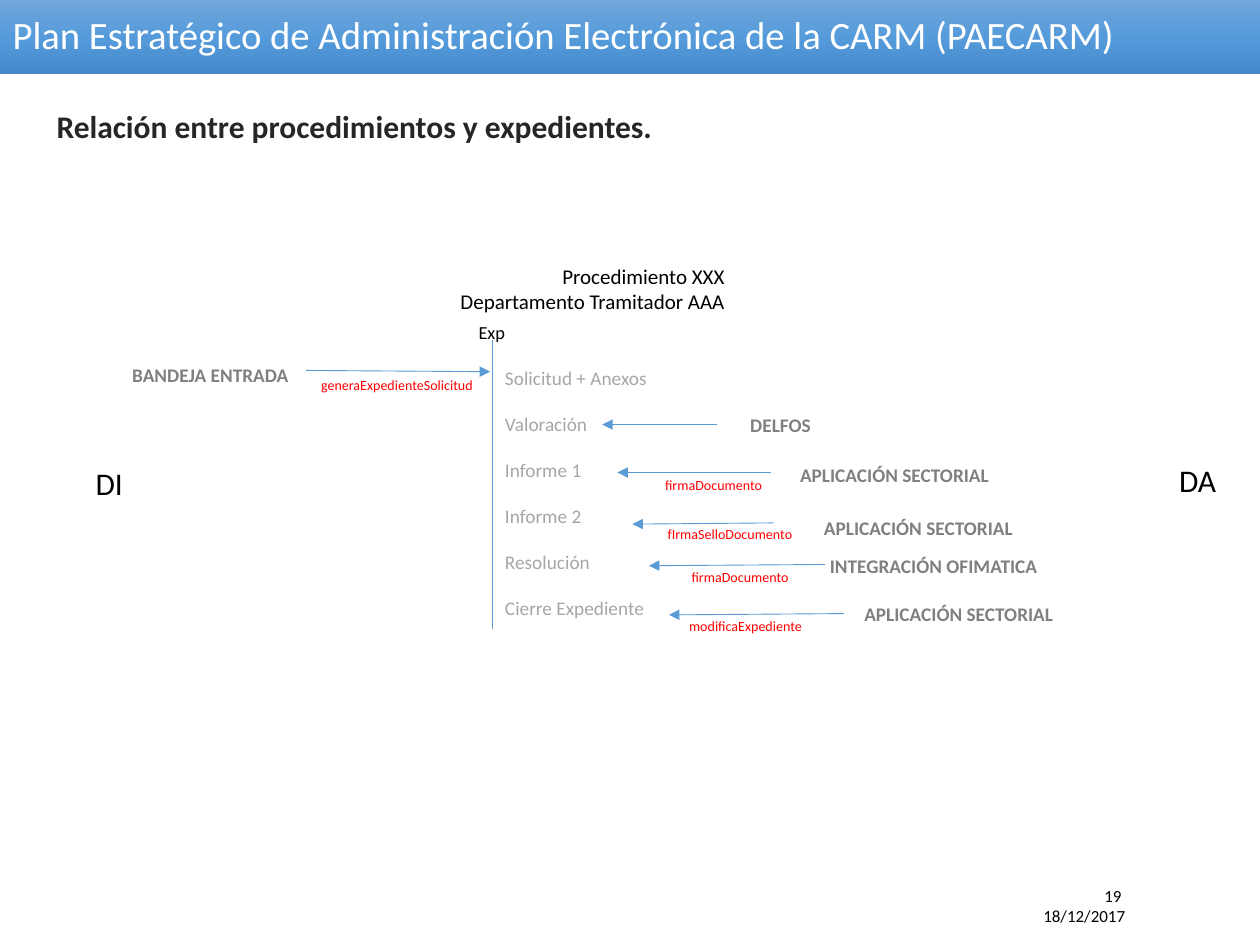
from copy import deepcopy
from dataclasses import dataclass

from lxml.etree import SubElement
from pptx import Presentation
from pptx.dml.color import RGBColor
from pptx.enum.shapes import MSO_CONNECTOR
from pptx.enum.text import MSO_ANCHOR, MSO_AUTO_SIZE, PP_ALIGN
from pptx.oxml.ns import qn
from pptx.util import Inches, Pt

# Grid of 100 columns by 75 rows over the whole slide
SLIDE_WIDTH, SLIDE_HEIGHT = Inches(10), Inches(7.5)
COLUMNS, ROWS = 100, 75


@dataclass(frozen=True)
class Theme:
    font: str = "Calibri"
    black: str = "000000"
    white: str = "FFFFFF"
    heading: str = "262626"
    system: str = "808080"
    step: str = "A6A6A6"
    call: str = "FF0000"
    line: str = "5B9BD5"
    band: tuple = ((0, "71A6DB"), (0.5, "559BDB"), (1, "448ACA"))
    title_size: float = 22.1
    large_size: float = 18
    procedure_size: float = 12
    body_size: float = 11
    file_size: float = 10.5
    footer_size: float = 9.7
    call_size: float = 8
    line_width: float = 0.5
    step_gap: float = 13


THEME = Theme()

STEPS = ("Solicitud + Anexos", "Valoración", "Informe 1",
         "Informe 2", "Resolución", "Cierre Expediente")

# Arrow start and end, in columns and rows
ARROWS = (
    ((24.3, 29.4), (38.9, 29.5)),
    ((56.9, 33.7), (47.8, 33.7)),
    ((61.2, 37.5), (49, 37.5)),
    ((61.4, 41.5), (50.2, 41.6)),
    ((65.5, 44.8), (51.5, 44.9)),
    ((67, 48.7), (53.1, 48.8)),
)

# Text, left, top and width of each box, in columns and rows
SYSTEMS = (
    ("BANDEJA ENTRADA", 9.4, 28.3, 14.6),
    ("DELFOS", 58.5, 32.3, 6.9),
    ("APLICACIÓN SECTORIAL", 62.4, 36.3, 17.2),
    ("APLICACIÓN SECTORIAL", 64.3, 40.5, 17.2),
    ("INTEGRACIÓN OFIMATICA", 64.7, 43.5, 18.8),
    ("APLICACIÓN SECTORIAL", 67.5, 47.3, 17.2),
)
CALLS = (
    ("generaExpedienteSolicitud", 24.5, 29.4, 14.3),
    ("firmaDocumento", 51.8, 37.3, 9.8),
    ("fIrmaSelloDocumento", 52, 41.2, 12),
    ("firmaDocumento", 53.9, 44.6, 9.8),
    ("modificaExpediente", 53.7, 48.5, 11.1),
)
PARTIES = (("DI", 6.6, 36.3, 4.2), ("DA", 92.6, 36.1, 5))


def across(columns):
    return round(SLIDE_WIDTH * columns / COLUMNS)


def down(rows):
    return round(SLIDE_HEIGHT * rows / ROWS)


def color(value):
    return RGBColor.from_string(value)


def write(frame, *lines, size, ink=THEME.black, bold=False,
          align=PP_ALIGN.LEFT, gap=0, line_spacing=None):
    """Fill a text frame with one paragraph per line."""
    for index, line in enumerate(lines):
        paragraph = frame.add_paragraph() if index else frame.paragraphs[0]
        paragraph.alignment = align
        if index and gap:
            paragraph.space_before = Pt(gap)
        if line_spacing:
            paragraph.line_spacing = line_spacing
        run = paragraph.add_run()
        run.text = line
        run.font.name, run.font.size, run.font.bold = THEME.font, Pt(size), bold
        run.font.color.rgb = color(ink)


def add_text(slide, *lines, left, top, width, height=2.9, wrap=False, **style):
    shape = slide.shapes.add_textbox(
        across(left), down(top), across(width), down(height))
    shape.text_frame.word_wrap = wrap
    shape.text_frame.auto_size = MSO_AUTO_SIZE.SHAPE_TO_FIT_TEXT
    write(shape.text_frame, *lines, **style)


def add_line(slide, start, end, arrow=False):
    connector = slide.shapes.add_connector(
        MSO_CONNECTOR.STRAIGHT, across(start[0]), down(start[1]),
        across(end[0]), down(end[1]))
    connector.line.color.rgb = color(THEME.line)
    connector.line.width = Pt(THEME.line_width)
    if arrow:
        SubElement(connector.line._get_or_add_ln(), qn("a:tailEnd"), type="triangle")
    SubElement(connector._element.spPr, qn("a:effectLst"))


def fill_band(shape):
    """Vertical gradient with three stops."""
    shape.fill.gradient()
    shape.fill.gradient_angle = 270
    stop_list = shape._element.spPr.find(".//" + qn("a:gsLst"))
    stop_list.append(deepcopy(stop_list[-1]))
    for stop, (position, value) in zip(shape.fill.gradient_stops, THEME.band):
        stop.position = position
        stop.color.rgb = color(value)


def add_title(slide, text):
    title = slide.shapes.title
    title.left, title.top = 0, 0
    title.width, title.height = SLIDE_WIDTH, down(5.9)
    fill_band(title)
    frame = title.text_frame
    frame.auto_size = MSO_AUTO_SIZE.NONE
    frame.vertical_anchor = MSO_ANCHOR.MIDDLE
    write(frame, text, size=THEME.title_size, ink=THEME.white, line_spacing=0.9)


def add_labels(slide, labels, **style):
    for text, left, top, width in labels:
        add_text(slide, text, left=left, top=top, width=width, **style)


def main():
    presentation = Presentation()
    presentation.slide_width, presentation.slide_height = SLIDE_WIDTH, SLIDE_HEIGHT
    slide = presentation.slides.add_slide(presentation.slide_layouts[5])

    # Title band, heading and footer
    add_title(slide, "Plan Estratégico de Administración Electrónica de la CARM (PAECARM)")
    add_text(slide, "Relación entre procedimientos y expedientes.",
             left=3.5, top=8, width=50.2, height=4,
             size=THEME.large_size, ink=THEME.heading, bold=True)
    add_text(slide, "19 ", "18/12/2017", left=71.3, top=69.8, width=19, height=4.3,
             wrap=True, size=THEME.footer_size, align=PP_ALIGN.RIGHT)

    # Procedure, its file and the steps along the timeline
    add_text(slide, "Procedimiento XXX", "Departamento Tramitador AAA",
             left=34.9, top=20.4, width=23.6, height=5, wrap=True,
             size=THEME.procedure_size, align=PP_ALIGN.RIGHT)
    add_text(slide, "Exp", left=37, top=25, width=4.5, size=THEME.file_size)
    add_line(slide, (39.1, 27), (39.1, 49.9))
    add_text(slide, *STEPS, left=39.1, top=28.6, width=13.4, height=25.1,
             size=THEME.body_size, ink=THEME.step, gap=THEME.step_gap)

    # Systems, the arrows to the steps and the calls they make
    for start, end in ARROWS:
        add_line(slide, start, end, arrow=True)
    add_labels(slide, SYSTEMS, size=THEME.body_size, ink=THEME.system,
               bold=True, align=PP_ALIGN.CENTER)
    add_labels(slide, CALLS, height=2.4, size=THEME.call_size, ink=THEME.call)

    # Parties on both sides
    add_labels(slide, PARTIES, height=4, size=THEME.large_size)

    presentation.save("out.pptx")


if __name__ == "__main__":
    main()
